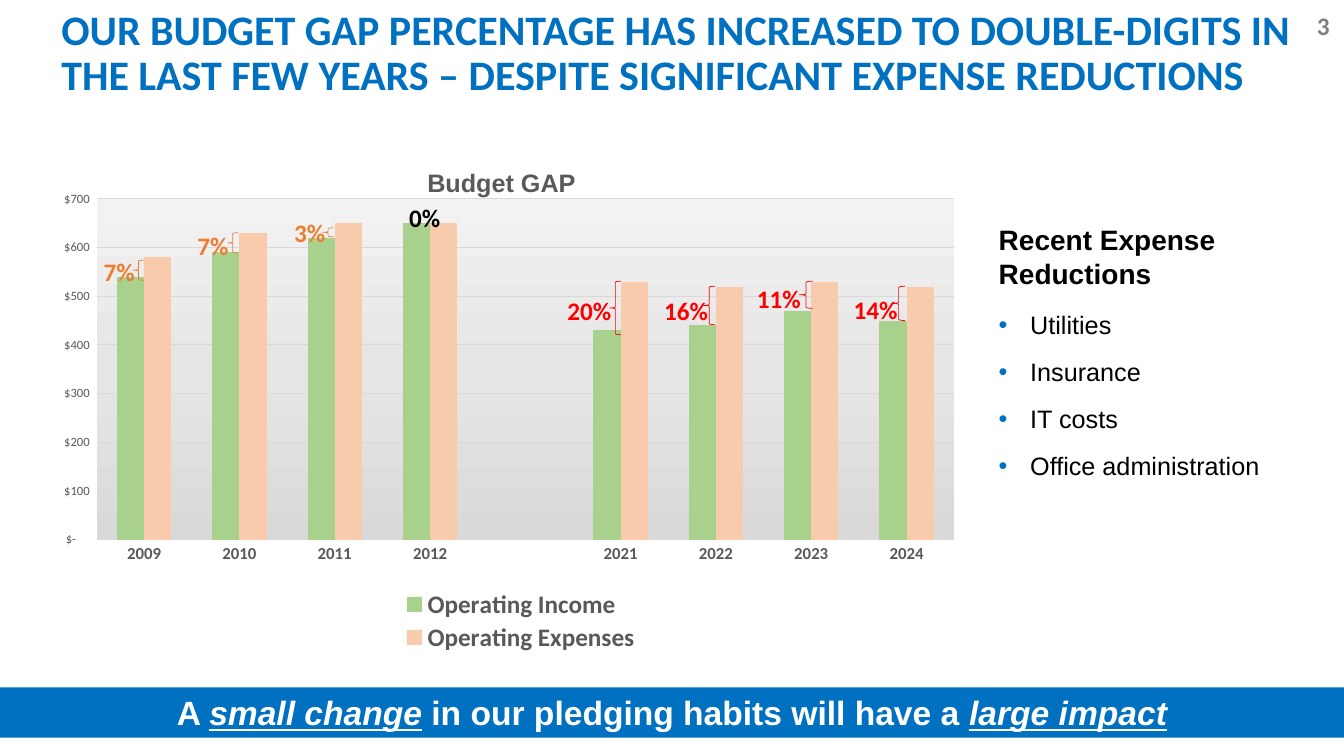
"""Build the budget gap slide: column chart, gap labels, expense list and banner."""
import pptx
import pptx.chart.data
import pptx.dml.color
import pptx.enum.chart
import pptx.enum.shapes
import pptx.enum.text
import pptx.oxml
import pptx.oxml.ns
import pptx.util
from dataclasses import dataclass

Pt = pptx.util.Pt
RGB = pptx.dml.color.RGBColor.from_string
ALIGN = pptx.enum.text.PP_ALIGN
ANCHOR = pptx.enum.text.MSO_ANCHOR
SHAPE = pptx.enum.shapes.MSO_SHAPE
qn = pptx.oxml.ns.qn
parse_xml = pptx.oxml.parse_xml
nsdecls = pptx.oxml.ns.nsdecls


@dataclass(frozen=True)
class Theme:
    blue: str = "0070C0"
    white: str = "FFFFFF"
    black: str = "000000"
    gray: str = "595959"
    page_gray: str = "808080"
    rule: str = "D9D9D9"
    orange: str = "ED7D31"
    red: str = "FF0000"
    income: str = "A9D18E"
    expenses: str = "F8CBAD"
    plot_stops: tuple = ((0, "F2F2F2"), (50, "E6E6E6"), (100, "D9D9D9"))
    head: str = "Calibri"
    body: str = "Arial"
    title: int = 30
    banner: int = 24
    subhead: int = 20
    text: int = 18
    category: int = 12
    value: int = 9


T = Theme()


def style(font, size, color, name, bold=True):
    font.size, font.bold, font.name = Pt(size), bold, name
    font.color.rgb = RGB(color)
    return font


def place(parent, index, x, y, w=None, h=None, inner=False):
    for old in parent.findall(qn("c:layout")):
        parent.remove(old)
    target = '<c:layoutTarget val="inner"/>' if inner else ""
    size = f'<c:w val="{w}"/><c:h val="{h}"/>' if w else ""
    parent.insert(index, parse_xml(
        f'<c:layout {nsdecls("c")}><c:manualLayout>{target}'
        '<c:xMode val="edge"/><c:yMode val="edge"/>'
        f'<c:x val="{x}"/><c:y val="{y}"/>{size}</c:manualLayout></c:layout>'))


prs = pptx.Presentation()
prs.slide_width, prs.slide_height = Pt(960), Pt(540)
s = prs.slides.add_slide(prs.slide_layouts[6])

banner = s.shapes.add_shape(SHAPE.RECTANGLE, Pt(0), Pt(491), Pt(960), Pt(36))
banner.shadow.inherit = False
banner.fill.solid()
banner.fill.fore_color.rgb = RGB(T.blue)
banner.line.fill.background()
p = banner.text_frame.paragraphs[0]
p.alignment = ALIGN.CENTER
for text, emphasis in (("A ", False), ("small change", True),
                       (" in our pledging habits will have a ", False),
                       ("large impact", True)):
    r = p.add_run()
    r.text = text
    font = style(r.font, T.banner, T.white, T.body)
    font.italic = font.underline = emphasis

data = pptx.chart.data.CategoryChartData()
data.categories = ["2009", "2010", "2011", "2012", "", "2021", "2022", "2023", "2024"]
data.add_series("Operating Income", (540, 590, 620, 650, None, 430, 440, 470, 450))
data.add_series("Operating Expenses", (580, 630, 650, 650, None, 530, 520, 530, 520))
chart = s.shapes.add_chart(pptx.enum.chart.XL_CHART_TYPE.COLUMN_CLUSTERED,
                           Pt(22.3), Pt(97.2), Pt(666), Pt(374.4), data).chart
style(chart.font, 10, T.black, T.head, False)

chart.has_title = True
r = chart.chart_title.text_frame.paragraphs[0].add_run()
r.text = "Budget GAP"
style(r.font, T.text, T.gray, T.body)
chart.has_legend = True
chart.legend.position = pptx.enum.chart.XL_LEGEND_POSITION.BOTTOM
chart.legend.include_in_layout = False
style(chart.legend.font, T.text, T.gray, T.head)

plot = chart.plots[0]
plot.gap_width, plot.overlap, plot.vary_by_categories = 150, 0, False
for series, color in zip(plot.series, (T.income, T.expenses)):
    series.format.fill.solid()
    series.format.fill.fore_color.rgb = RGB(color)

years, dollars = chart.category_axis, chart.value_axis
for axis, size, bold in ((years, T.category, True), (dollars, T.value, False)):
    axis.major_tick_mark = axis.minor_tick_mark = pptx.enum.chart.XL_TICK_MARK.NONE
    style(axis.tick_labels.font, size, T.gray, T.head, bold)
dollars.minimum_scale, dollars.maximum_scale, dollars.major_unit = 0, 700, 100
dollars.tick_labels.number_format = r'_("$"* #,##0_);_("$"* \(#,##0\);_("$"* "-"??_);_(@_)'
dollars.tick_labels.number_format_is_linked = False
dollars.format.line.fill.background()
for line in (years.format.line, dollars.major_gridlines.format.line):
    line.color.rgb, line.width = RGB(T.rule), Pt(0.75)

plot_area = chart._chartSpace.chart.plotArea
place(plot_area, 0, 0.07, 0.12, 0.92, 0.65, inner=True)
place(chart.chart_title._element, 1, 0.42, 0.05)
place(chart.legend._element, 1, 0.39, 0.86, 0.27, 0.13)
stops = "".join(f'<a:gs pos="{pos * 1000}"><a:srgbClr val="{color}"/></a:gs>'
                for pos, color in T.plot_stops)
plot_area.append(parse_xml(
    f'<c:spPr {nsdecls("c", "a")}><a:gradFill><a:gsLst>{stops}</a:gsLst>'
    '<a:lin ang="5400000" scaled="0"/></a:gradFill></c:spPr>'))

braces = (
    (95, 185.8, 8, 14.4, T.orange), (162.7, 166.3, 7.2, 14.4, T.orange),
    (230.4, 162.7, 8, 6.5, T.orange), (435.6, 200.9, 8, 38.2, T.red),
    (502.6, 204.5, 8, 27.4, T.red), (571, 200.9, 9.4, 19.4, T.red),
    (637.2, 204.5, 9.4, 24.5, T.red),
)
for x, y, w, h, color in braces:
    brace = s.shapes.add_shape(SHAPE.LEFT_BRACE, Pt(x), Pt(y), Pt(w), Pt(h))
    brace.shadow.inherit = False
    brace.fill.background()
    brace.line.color.rgb, brace.line.width = RGB(color), Pt(0.5)

gaps = (
    ("7%", 67, 179.3, 41, T.orange), ("7%", 133.9, 161.3, 41, T.orange),
    ("3%", 203, 151.9, 41, T.orange), ("0%", 285.1, 141.1, 41, T.black),
    ("20%", 398.2, 207.4, 56.2, T.red), ("16%", 467.3, 207.4, 56.2, T.red),
    ("11%", 533.5, 198.7, 56.2, T.red), ("14%", 602.6, 206.6, 56.2, T.red),
)
texts = [(text, x, y, w, 26, T.text, color, T.head, ANCHOR.TOP, ALIGN.LEFT)
         for text, x, y, w, color in gaps]
texts += [
    ("OUR BUDGET GAP PERCENTAGE HAS INCREASED TO DOUBLE-DIGITS IN THE LAST FEW YEARS "
     "– DESPITE SIGNIFICANT EXPENSE REDUCTIONS",
     36.7, 0, 923, 75, T.title, T.blue, T.head, ANCHOR.BOTTOM, ALIGN.LEFT),
    ("Recent Expense Reductions", 706.3, 158.4, 221, 49, T.subhead, T.black, T.body,
     ANCHOR.MIDDLE, ALIGN.LEFT),
    ("3", 740.9, 3.6, 216, 28.8, T.text, T.page_gray, T.head, ANCHOR.MIDDLE, ALIGN.RIGHT),
]
for text, x, y, w, h, size, color, name, anchor, align in texts:
    tf = s.shapes.add_textbox(Pt(x), Pt(y), Pt(w), Pt(h)).text_frame
    tf.word_wrap, tf.vertical_anchor = True, anchor
    p = tf.paragraphs[0]
    p.alignment = align
    if size == T.title:
        p.line_spacing = 0.9
    r = p.add_run()
    r.text = text
    style(r.font, size, color, name)

tf = s.shapes.add_textbox(Pt(706.3), Pt(217.4), Pt(221), Pt(153.4)).text_frame
tf.word_wrap = True
for i, item in enumerate(("Utilities", "Insurance", "IT costs", "Office administration")):
    p = tf.add_paragraph() if i else tf.paragraphs[0]
    p.space_before, p.space_after = Pt(6 if i else 0), Pt(6)
    pPr = p._p.get_or_add_pPr()
    pPr.set("marL", str(Pt(22.5)))
    pPr.set("indent", str(-Pt(22.5)))
    pPr.append(parse_xml(f'<a:buClr {nsdecls("a")}><a:srgbClr val="{T.blue}"/></a:buClr>'))
    pPr.append(parse_xml(f'<a:buFont {nsdecls("a")} typeface="{T.body}"/>'))
    pPr.append(parse_xml(f'<a:buChar {nsdecls("a")} char="•"/>'))
    r = p.add_run()
    r.text = item
    style(r.font, T.text, T.black, T.body, False)

prs.save("out.pptx")
